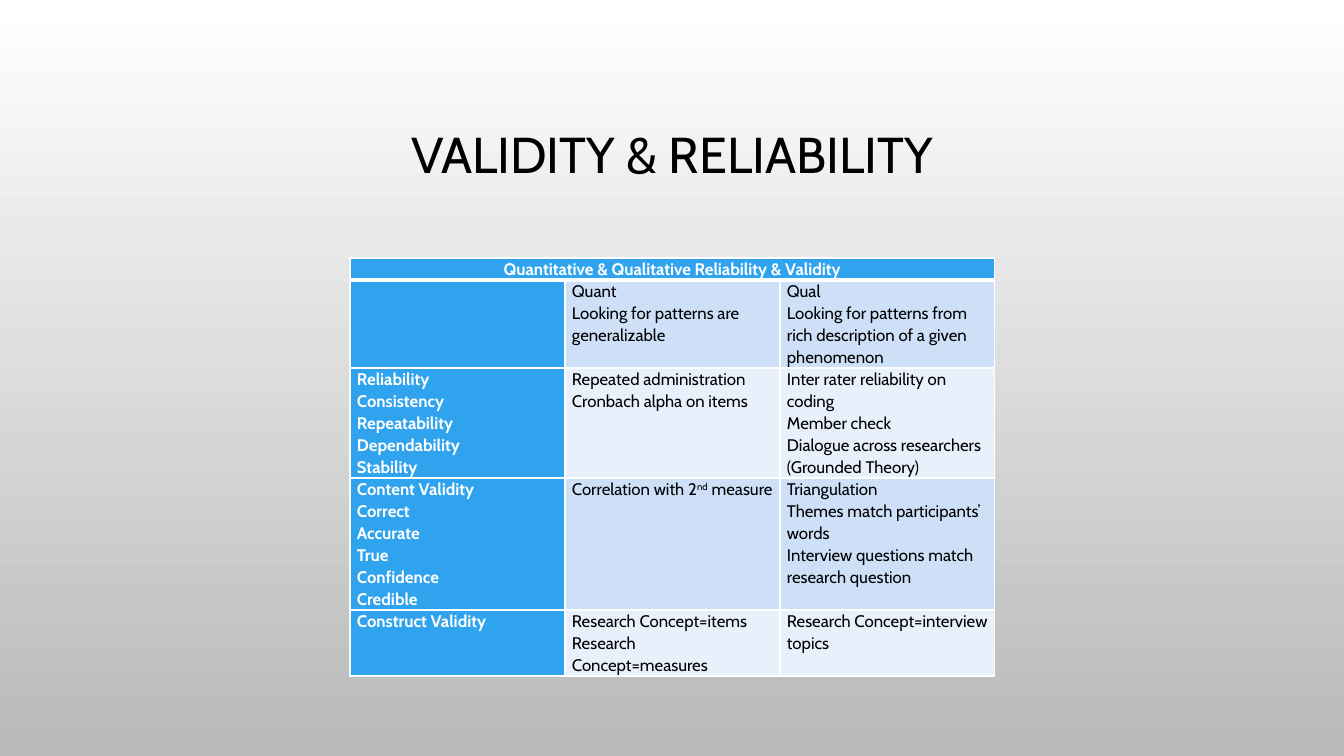
from lxml.etree import SubElement
from pptx import Presentation
from pptx.dml.color import RGBColor
from pptx.enum.text import MSO_ANCHOR, PP_ALIGN
from pptx.oxml.ns import qn
from pptx.util import Pt

EMU_PER_PX = 914400 / 100.8
WHITE = RGBColor(0xFF, 0xFF, 0xFF)
BLACK = RGBColor(0x00, 0x00, 0x00)
GREY = RGBColor(0xB9, 0xB9, 0xB9)
BLUE = RGBColor(0x2F, 0xA3, 0xEE)
PALE_BLUE = RGBColor(0xCD, 0xE0, 0xF8)
FAINT_BLUE = RGBColor(0xE8, 0xF0, 0xFC)

LINE_HEIGHT = 22
COLUMN_WIDTH = 215
LINES_PER_ROW = [1, 4, 5, 6, 3]
TABLE_ROWS = [
    [["Quantitative & Qualitative Reliability & Validity"], [], []],
    [
        [],
        ["Quant", "Looking for patterns are generalizable"],
        ["Qual", "Looking for patterns from rich description of a given phenomenon"],
    ],
    [
        ["Reliability", "Consistency", "Repeatability", "Dependability", "Stability"],
        ["Repeated administration", "Cronbach alpha on items"],
        [
            "Inter rater reliability on coding",
            "Member check",
            "Dialogue across researchers (Grounded Theory)",
        ],
    ],
    [
        ["Content Validity", "Correct", "Accurate", "True", "Confidence", "Credible"],
        ["Correlation with 2^nd^ measure"],
        [
            "Triangulation",
            "Themes match participants’ words",
            "Interview questions match research question",
        ],
    ],
    [
        ["Construct Validity"],
        ["Research Concept=items", "Research Concept=measures"],
        ["Research Concept=interview topics"],
    ],
]


def px(length):
    return round(length * EMU_PER_PX)


def assign(target, values):
    for name, value in values.items():
        setattr(target, name, value)


class SlideBuilder:
    font_name = "Cabin"

    def __init__(self, page):
        self.page = page

    def background(self, top, bottom):
        fill = self.page.background.fill
        fill.gradient()
        fill.gradient_angle = 270
        for stop, color, position in zip(fill.gradient_stops, (top, bottom), (0, 1)):
            stop.color.rgb = color
            stop.position = position

    def add_lines(self, frame, lines, size, color, bold, align, spacing):
        for index, line in enumerate(lines):
            para = frame.add_paragraph() if index else frame.paragraphs[0]
            assign(para, {"alignment": align, "line_spacing": spacing})
            for part, text in enumerate(line.split("^")):
                span = para.add_run()
                span.text = text
                assign(span.font, {"name": self.font_name, "size": Pt(size), "bold": bold})
                span.font.color.rgb = color
                if part % 2:
                    span._r.get_or_add_rPr().set("baseline", "30000")

    def title(self, text, left, top, width, height):
        box = self.page.shapes.add_textbox(px(left), px(top), px(width), px(height))
        assign(box.text_frame, {"word_wrap": True, "vertical_anchor": MSO_ANCHOR.MIDDLE})
        self.add_lines(box.text_frame, [text], 36, BLACK, False, PP_ALIGN.CENTER, 0.9)

    def borders(self, cell, widths):
        properties = cell._tc.get_or_add_tcPr()
        for side, width in widths.items():
            line = SubElement(properties, qn(f"a:ln{side}"), w=str(Pt(width)))
            fill = SubElement(line, qn("a:solidFill"))
            SubElement(fill, qn("a:srgbClr"), val=str(WHITE))

    def cell(self, cell, lines, row, column):
        margins = {"margin_left": px(7), "margin_right": px(7), "margin_top": 0, "margin_bottom": 0}
        assign(cell, margins)
        heading = row == 0 or column == 0
        widths = {"L": 1, "R": 1, "T": 3 if row == 1 else 1, "B": 1 if row else 3}
        self.borders(cell, widths)
        cell.fill.solid()
        cell.fill.fore_color.rgb = BLUE if heading else PALE_BLUE if row % 2 else FAINT_BLUE
        align = PP_ALIGN.LEFT if row else PP_ALIGN.CENTER
        color = WHITE if heading else BLACK
        self.add_lines(cell.text_frame, lines, 12, color, heading, align, 1.07)

    def table(self, rows, left, top):
        columns = len(rows[0])
        width, height = columns * COLUMN_WIDTH, sum(LINES_PER_ROW) * LINE_HEIGHT
        grid = self.page.shapes.add_table(
            len(rows), columns, px(left), px(top), px(width), px(height)
        ).table
        for column in grid.columns:
            column.width = px(COLUMN_WIDTH)
        for grid_row, lines in zip(grid.rows, LINES_PER_ROW):
            grid_row.height = px(lines * LINE_HEIGHT)
        grid.cell(0, 0).merge(grid.cell(0, columns - 1))
        for row, contents in enumerate(rows):
            for column, lines in enumerate(contents):
                self.cell(grid.cell(row, column), lines, row, column)


def main():
    deck = Presentation()
    assign(deck, {"slide_width": px(1344), "slide_height": px(756)})
    builder = SlideBuilder(deck.slides.add_slide(deck.slide_layouts[6]))
    builder.background(WHITE, GREY)
    builder.title("VALIDITY & RELIABILITY", 101, 69, 1142, 176)
    builder.table(TABLE_ROWS, 350, 258)
    deck.save("out.pptx")


if __name__ == "__main__":
    main()
